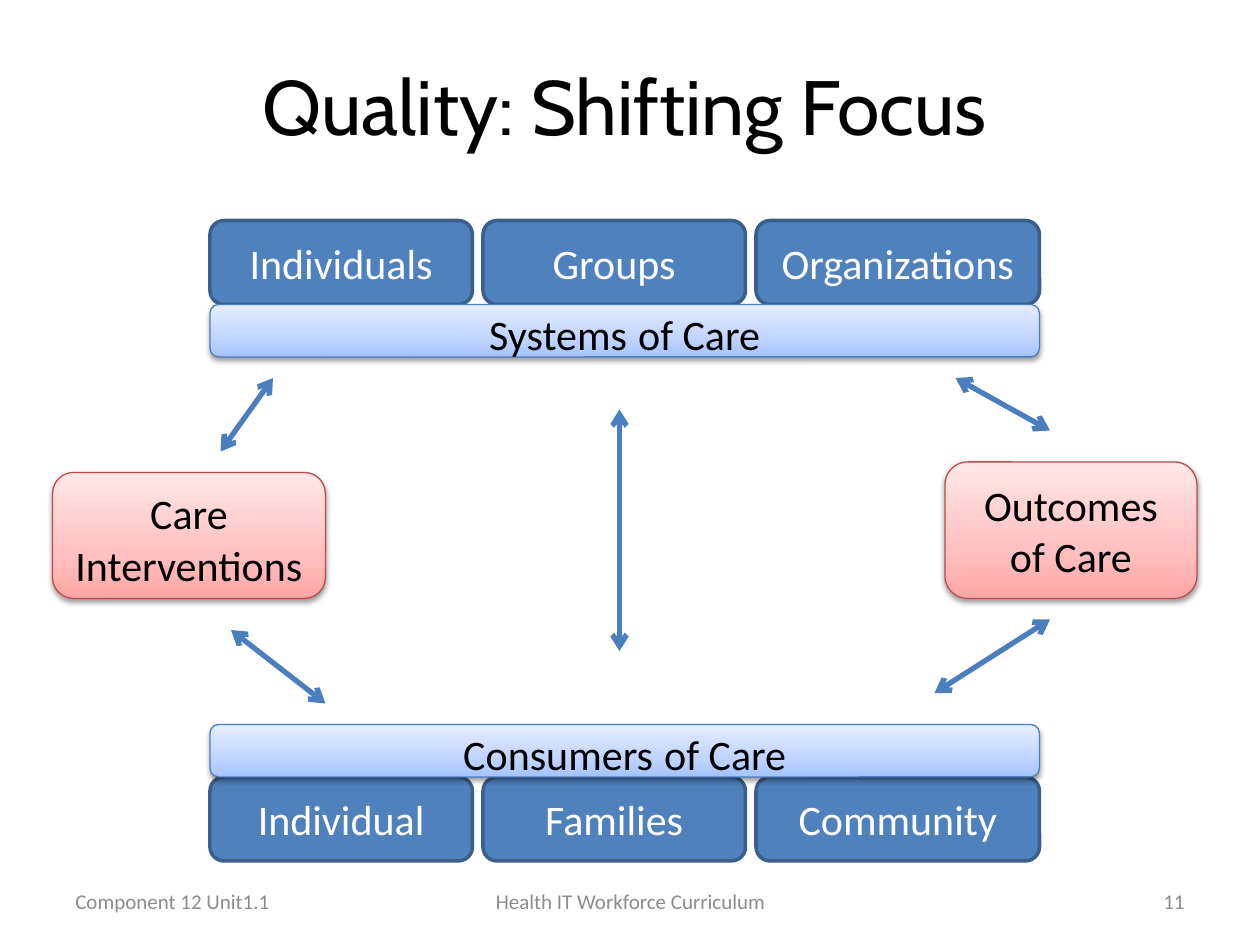
from lxml.etree import SubElement
from pptx import Presentation
from pptx.dml.color import RGBColor
from pptx.enum.shapes import MSO_CONNECTOR, MSO_SHAPE
from pptx.enum.text import MSO_ANCHOR, MSO_AUTO_SIZE, PP_ALIGN
from pptx.oxml.ns import qn
from pptx.util import Cm, Pt

THEME = {
    "heading_font": "Cabin", "body_font": "Calibri",
    "title_size": 44, "label_size": 24, "space_size": 28, "footer_size": 12,
    "ink": "000000", "footer": "8C8C8C", "arrow": "4B7EBC", "arrow_width": 3,
    "member": {"fill": "4F81BD", "line": "3A5F8C", "width": 2, "text": "FFFFFF"},
    "bar": {"stops": [(0, "A4C4FF"), (35, "BFD4FF"), (100, "E6EEFF")],
            "line": "4B7EBC", "width": 0.75, "text": "000000"},
    "care": {"stops": [(0, "FFA6A5"), (35, "FFC0BF"), (100, "FFE7E7")],
             "line": "BF4C48", "width": 0.75, "text": "000000"},
}

# Content; positions count grid steps, twelve to the inch
TITLE = "Quality: Shifting Focus"
WIDE_SPACE = (" ", THEME["space_size"])
CARE_BOXES = [
    ((90, 44, 24, 13), ["Outcomes of Care"]),
    ((5, 45, 26, 12), ["Care", WIDE_SPACE, "Interventions"]),
]
# Member row top, member names, bar top, bar label
GROUPS = [
    (21, ["Individuals", "Groups", "Organizations"],
     29, ["Systems", WIDE_SPACE, "of Care"]),
    (74, ["Individual", "Families", "Community"],
     69, ["Consumers", WIDE_SPACE, "of Care"]),
]
GROUP_LEFT, MEMBER_WIDTHS, MEMBER_GAP = 20, [25, 25, 27], 1
MEMBER_HEIGHT, BAR_HEIGHT = 8, 5
ARROWS = [
    ((59, 39), (59, 62)),
    ((26, 36), (21, 43)),
    ((22, 60), (31, 67)),
    ((91, 36), (100, 41)),
    ((100, 59), (89, 66)),
]
FOOTERS = [
    (1.27, 5.92, "Component 12 Unit1.1", PP_ALIGN.LEFT),
    (18.21, 5.92, "11", PP_ALIGN.RIGHT),
    (8.69, 8.05, "Health IT Workforce Curriculum", PP_ALIGN.CENTER),
]


def grid(steps):
    return Cm(steps * 2.54 / 12)


def write(frame, runs, size, color, font, align=PP_ALIGN.CENTER, anchor=MSO_ANCHOR.MIDDLE):
    frame.word_wrap = True
    frame.auto_size = MSO_AUTO_SIZE.NONE
    frame.vertical_anchor = anchor
    para = frame.paragraphs[0]
    para.alignment = align
    for item in runs:
        text, points = item if isinstance(item, tuple) else (item, size)
        span = para.add_run()
        span.text = text
        span.font.size = Pt(points)
        span.font.name = font
        span.font.color.rgb = RGBColor.from_string(color)


def add_gradient(shape, stops):
    shape.fill.gradient()
    shape.fill.gradient_angle = 90
    stop_list = shape.element.spPr.find(".//" + qn("a:gsLst"))
    for old in list(stop_list):
        stop_list.remove(old)
    for percent, color in stops:
        stop = SubElement(stop_list, qn("a:gs"), pos=str(percent * 1000))
        SubElement(stop, qn("a:srgbClr"), val=color)


def add_soft_shadow(shape):
    effects = shape.element.spPr.find(qn("a:effectLst"))
    shadow = SubElement(effects, qn("a:outerShdw"), blurRad="40000", dist="20000",
                        dir="5400000", rotWithShape="0")
    color = SubElement(shadow, qn("a:srgbClr"), val="000000")
    SubElement(color, qn("a:alpha"), val="38000")


def add_box(page, place, runs, style):
    box = page.shapes.add_shape(MSO_SHAPE.ROUNDED_RECTANGLE, *map(grid, place))
    box.shadow.inherit = False
    if "stops" in style:
        add_gradient(box, style["stops"])
        add_soft_shadow(box)
    else:
        box.fill.solid()
        box.fill.fore_color.rgb = RGBColor.from_string(style["fill"])
    box.line.color.rgb = RGBColor.from_string(style["line"])
    box.line.width = Pt(style["width"])
    write(box.text_frame, runs, THEME["label_size"], style["text"], THEME["body_font"])


def add_arrow(page, start, end):
    arrow = page.shapes.add_connector(MSO_CONNECTOR.STRAIGHT, *map(grid, start + end))
    arrow.line.color.rgb = RGBColor.from_string(THEME["arrow"])
    arrow.line.width = Pt(THEME["arrow_width"])
    line = arrow.line._get_or_add_ln()
    for tag in ("a:headEnd", "a:tailEnd"):
        SubElement(line, qn(tag), type="arrow")
    SubElement(arrow.element.spPr, qn("a:effectLst"))


def main():
    deck = Presentation()
    deck.slide_width, deck.slide_height = Cm(25.4), Cm(19.05)
    page = deck.slides.add_slide(deck.slide_layouts[5])

    # Title
    title = page.shapes.title
    title.left, title.top, title.width, title.height = Cm(1.27), Cm(0.76), Cm(22.66), Cm(2.41)
    write(title.text_frame, [TITLE], THEME["title_size"], THEME["ink"],
          THEME["heading_font"], anchor=MSO_ANCHOR.BOTTOM)

    # Care boxes at the sides
    for place, runs in CARE_BOXES:
        add_box(page, place, runs, THEME["care"])

    # Member rows, each with its bar
    group_width = sum(MEMBER_WIDTHS) + MEMBER_GAP * (len(MEMBER_WIDTHS) - 1)
    for row_top, members, bar_top, bar_runs in GROUPS:
        left = GROUP_LEFT
        for name, width in zip(members, MEMBER_WIDTHS):
            add_box(page, (left, row_top, width, MEMBER_HEIGHT), [name], THEME["member"])
            left += width + MEMBER_GAP
        add_box(page, (GROUP_LEFT, bar_top, group_width, BAR_HEIGHT), bar_runs, THEME["bar"])

    # Two-way arrows
    for start, end in ARROWS:
        add_arrow(page, start, end)

    # Footer
    for left, width, text, align in FOOTERS:
        box = page.shapes.add_textbox(Cm(left), Cm(17.65), Cm(width), Cm(1.02))
        write(box.text_frame, [text], THEME["footer_size"], THEME["footer"],
              THEME["body_font"], align)

    deck.save("out.pptx")


if __name__ == "__main__":
    main()
